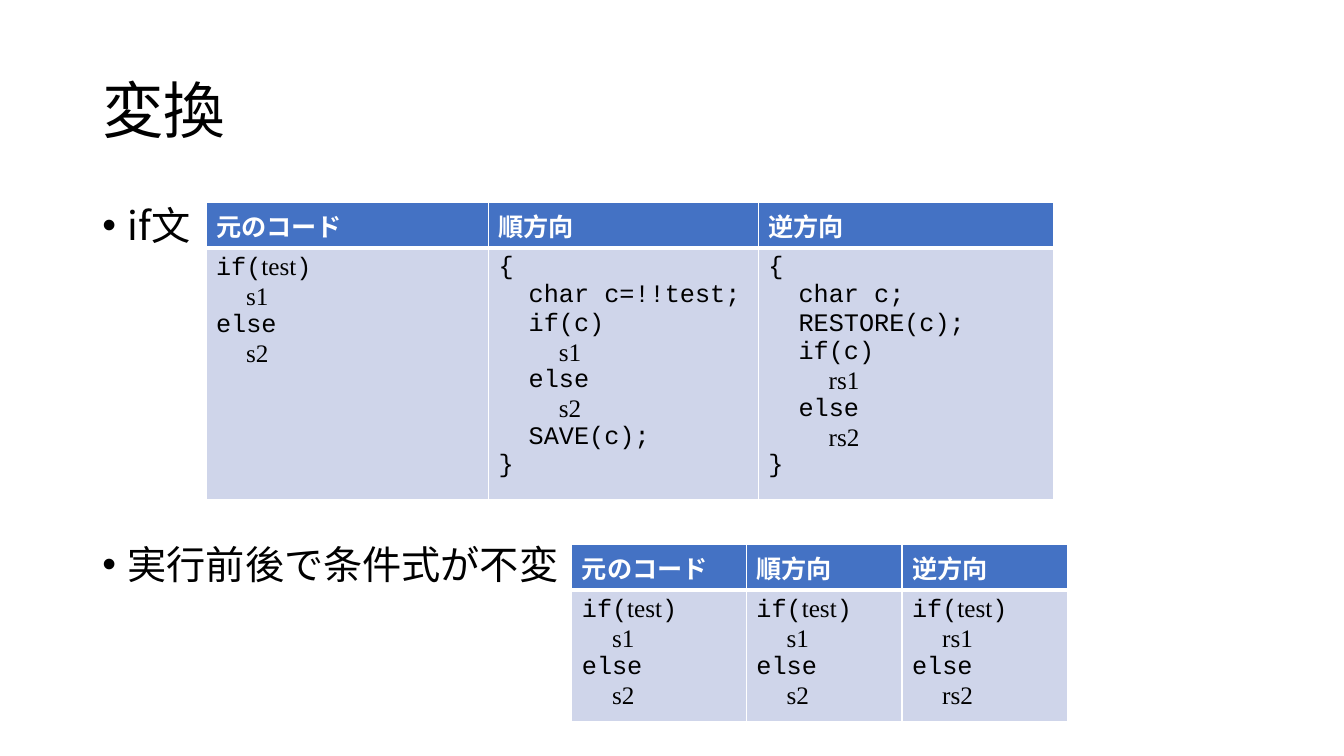
from lxml import etree
from pptx import Presentation
from pptx import util as u
from pptx.dml.color import RGBColor
from pptx.enum import text
from pptx.oxml.ns import qn

SANS = "Noto Sans CJK JP"
CODE = "Courier New"
METAVARIABLE = "Times New Roman"
HEADINGS = ["元のコード", "順方向", "逆方向"]


def color(value):
    return RGBColor.from_string(value)


def if_else(then_part, else_part):
    """Code lines as (indent level, text); text between bars is a metavariable."""
    return [(0, "if(|test|)"), (1, f"|{then_part}"), (0, "else"), (1, f"|{else_part}")]


class SlideBuilder:
    ink = "000000"
    white = "FFFFFF"
    header_fill = "4472C4"
    body_fill = "CFD5EA"
    code_indent = u.Cm(0.76)
    bullet_indent = u.Cm(0.64)
    header_height = u.Cm(1.16)

    def __init__(self, slide):
        self.slide = slide

    def add_run(self, paragraph, content, size, font=SANS, ink=ink, bold=False):
        run = paragraph.add_run()
        run.text = content
        run.font.size = u.Pt(size)
        run.font.name = font
        run.font.bold = bold
        run.font.color.rgb = color(ink)
        if font == SANS:
            etree.SubElement(run.font._element, qn("a:ea"), typeface=font)

    def text_box(self, left, top, width, height, content, size,
                 anchor=text.MSO_ANCHOR.TOP):
        shape = self.slide.shapes.add_textbox(
            u.Cm(left), u.Cm(top), u.Cm(width), u.Cm(height))
        frame = shape.text_frame
        frame.word_wrap = True
        frame.vertical_anchor = anchor
        paragraph = frame.paragraphs[0]
        paragraph.line_spacing = 0.9
        self.add_run(paragraph, content, size)
        return paragraph

    def bullet(self, left, top, width, height, content):
        paragraph = self.text_box(left, top, width, height, content, 28)
        paragraph.space_before = u.Pt(10)
        properties = paragraph._p.get_or_add_pPr()
        properties.set("marL", str(self.bullet_indent))
        properties.set("indent", str(-self.bullet_indent))
        etree.SubElement(properties, qn("a:buFont"), typeface="Arial")
        etree.SubElement(properties, qn("a:buChar"), char="•")

    def style_cell(self, cell, fill, bottom=1):
        """White borders, then the fill, in the order the schema asks for."""
        properties = cell._tc.get_or_add_tcPr()
        for side, width in (("L", 1), ("R", 1), ("T", 1), ("B", bottom)):
            line = etree.SubElement(properties, qn(f"a:ln{side}"), w=str(u.Pt(width)))
            solid = etree.SubElement(line, qn("a:solidFill"))
            etree.SubElement(solid, qn("a:srgbClr"), val=self.white)
        cell.fill.solid()
        cell.fill.fore_color.rgb = color(fill)

    def write_code(self, frame, lines):
        for index, (level, line) in enumerate(lines):
            paragraph = frame.add_paragraph() if index else frame.paragraphs[0]
            paragraph._p.get_or_add_pPr().set("marL", str(level * self.code_indent))
            for part, content in enumerate(line.split("|")):
                if content:
                    self.add_run(paragraph, content, 18,
                                 METAVARIABLE if part % 2 else CODE)

    def code_table(self, left, top, widths, body_height, listings):
        table = self.slide.shapes.add_table(
            2, len(widths), u.Cm(left), u.Cm(top), u.Cm(sum(widths)),
            self.header_height + u.Cm(body_height)).table
        table.horz_banding = False
        table.rows[0].height = self.header_height
        table.rows[1].height = u.Cm(body_height)
        for index, (width, heading, lines) in enumerate(zip(widths, HEADINGS, listings)):
            table.columns[index].width = u.Cm(width)
            header, body = table.cell(0, index), table.cell(1, index)
            self.style_cell(header, self.header_fill, bottom=3)
            self.add_run(header.text_frame.paragraphs[0], heading, 18,
                         ink=self.white, bold=True)
            self.style_cell(body, self.body_fill)
            self.write_code(body.text_frame, lines)


def main():
    presentation = Presentation()
    presentation.slide_width = u.Cm(33.87)
    presentation.slide_height = u.Cm(19.05)
    builder = SlideBuilder(presentation.slides.add_slide(presentation.slide_layouts[6]))

    builder.text_box(2.33, 1.01, 29.21, 3.68, "変換", 44, text.MSO_ANCHOR.MIDDLE)
    builder.bullet(2.33, 5.07, 29.21, 1.5, "if文")
    builder.bullet(2.33, 13.62, 29.21, 1.5, "実行前後で条件式が不変")

    original = if_else("s1", "s2")
    forward = [
        (0, "{"), (1, "char c=!!test;"), (1, "if(c)"), (2, "|s1"),
        (1, "else"), (2, "|s2"), (1, "SAVE(c);"), (0, "}"),
    ]
    reverse = [
        (0, "{"), (1, "char c;"), (1, "RESTORE(c);"), (1, "if(c)"),
        (2, "|rs1"), (1, "else"), (2, "|rs2"), (0, "}"),
    ]
    builder.code_table(5.19, 5.09, [7.12, 6.8, 7.44], 6.1, [original, forward, reverse])
    builder.code_table(14.41, 13.71, [4.4, 3.92, 4.17], 3.25,
                       [original, original, if_else("rs1", "rs2")])

    presentation.save("out.pptx")


if __name__ == "__main__":
    main()
